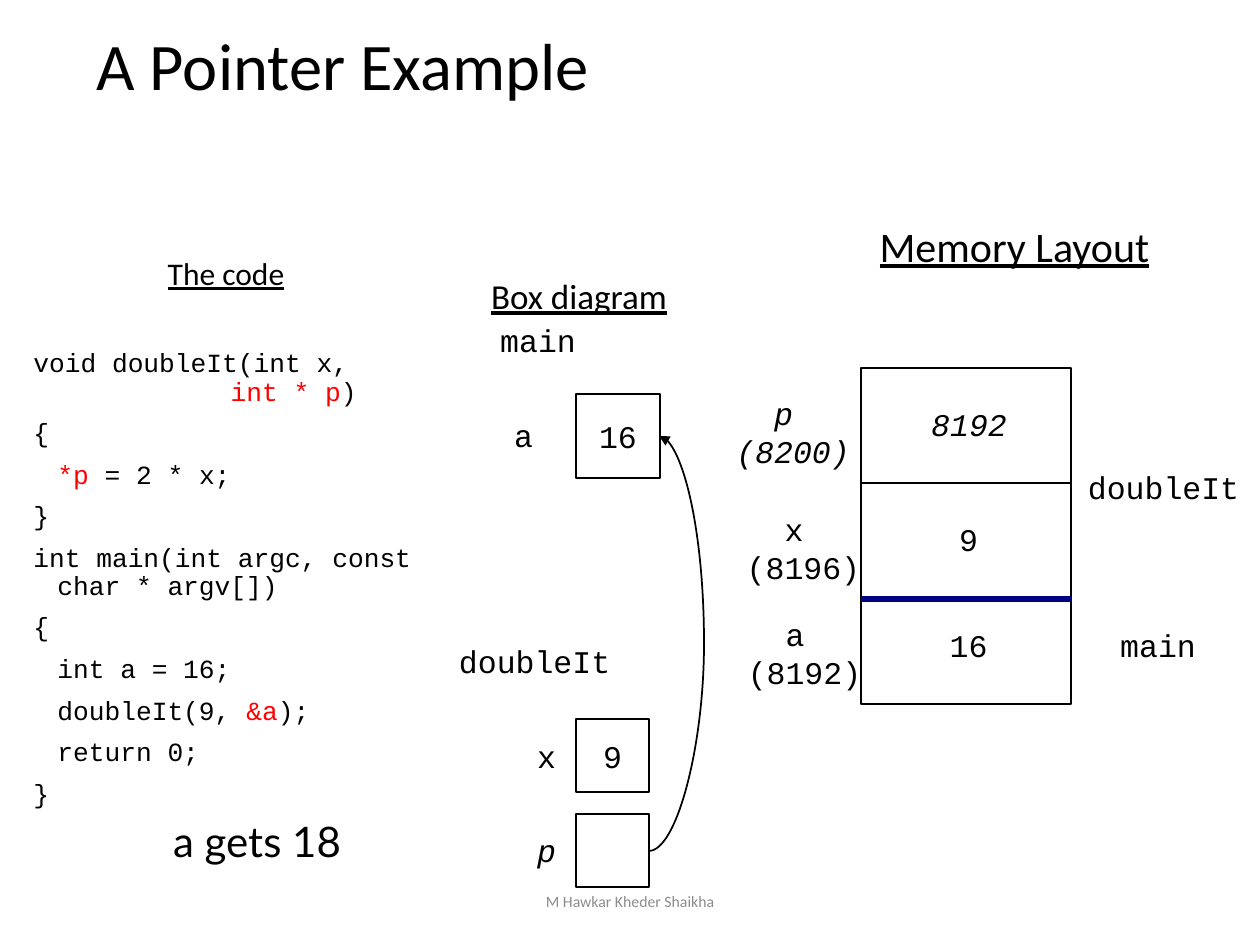
from lxml.etree import SubElement
from pptx import Presentation
from pptx.dml.color import RGBColor
from pptx.enum.shapes import MSO_CONNECTOR, MSO_SHAPE
from pptx.enum.text import MSO_ANCHOR, PP_ALIGN
from pptx.oxml.ns import qn
from pptx.util import Pt

EMU_PER_PX = 914400 / 126
BLACK, WHITE, RED, NAVY, GRAY = "000000", "FFFFFF", "FF0000", "000080", "8C8C8C"
SANS, MONO, NOTE = "Calibri", "Courier New", "Lato"


def px(n):
    return round(n * EMU_PER_PX)


def color(value):
    return RGBColor.from_string(value)


class Deck:
    def __init__(self, width, height):
        self.prs = Presentation()
        self.prs.slide_width, self.prs.slide_height = px(width), px(height)
        self.s = self.prs.slides.add_slide(self.prs.slide_layouts[6])

    def style(self, p, size, font=MONO, fill=BLACK, align=PP_ALIGN.CENTER,
              italic=False, underline=False, spacing=None):
        p.alignment = align
        if spacing:
            p.line_spacing = spacing
        p.font.size, p.font.name = Pt(size), font
        p.font.color.rgb = color(fill)
        p.font.italic, p.font.underline = italic, underline

    def text(self, box, text, size=18, wrap=False, anchor=MSO_ANCHOR.TOP, **style):
        tf = self.s.shapes.add_textbox(*map(px, box)).text_frame
        tf.word_wrap, tf.vertical_anchor = wrap, anchor
        p = tf.paragraphs[0]
        p.text = text
        self.style(p, size, **style)
        return tf

    def code_line(self, tf, parts, before=7.5, left=0, hanging=0):
        p = tf.add_paragraph()
        pPr = p._p.get_or_add_pPr()
        pPr.set("marL", str(px(left)))
        pPr.set("indent", str(px(-hanging)))
        self.style(p, 15, align=PP_ALIGN.LEFT, spacing=0.9)
        p.space_before = Pt(before)
        for i, part in enumerate(parts):
            for j, piece in enumerate(part.split("\v")):
                if j:
                    p.add_line_break()
                r = p.add_run()
                r.text = piece
                if i % 2:
                    r.font.color.rgb = color(RED)

    def box(self, x, y, w, h, text=""):
        sp = self.s.shapes.add_shape(MSO_SHAPE.RECTANGLE, px(x), px(y), px(w), px(h))
        sp.shadow.inherit = False
        sp.fill.solid()
        sp.fill.fore_color.rgb = color(WHITE)
        sp.line.color.rgb = color(BLACK)
        sp.line.width = Pt(1)
        if text:
            tf = sp.text_frame
            tf.word_wrap, tf.vertical_anchor = False, MSO_ANCHOR.MIDDLE
            tf.paragraphs[0].text = text
            self.style(tf.paragraphs[0], 18)

    def line(self, x1, y1, x2, y2, stroke=BLACK, width=1, kind=MSO_CONNECTOR.STRAIGHT):
        c = self.s.shapes.add_connector(kind, px(x1), px(y1), px(x2), px(y2))
        c.line.color.rgb = color(stroke)
        c.line.width = Pt(width)
        SubElement(c._element.spPr, qn("a:effectLst"))
        return c

    def curved_arrow(self, x1, y1, x2, y2, bulge_x):
        c = self.line(x1, y1, x2, y2, kind=MSO_CONNECTOR.CURVE)
        SubElement(c.line._get_or_add_ln(), qn("a:tailEnd"), type="triangle")
        adj = round((bulge_x - x1) / (x2 - x1) * 100000)
        guides = c._element.spPr.find(qn("a:prstGeom")).get_or_add_avLst()
        SubElement(guides, qn("a:gd"), name="adj1", fmla=f"val {adj}")


def main():
    deck = Deck(1260, 945)
    deck.text((84, 21, 1155, 95), "A Pointer Example", 38, wrap=True, font=SANS,
              anchor=MSO_ANCHOR.MIDDLE, align=PP_ALIGN.LEFT, spacing=0.9)

    code = deck.text((21, 252, 410, 651), "The code", wrap=True, font=SANS,
                     underline=True, spacing=0.9)
    hang = {"left": 24, "hanging": 24}
    body = {"left": 24}
    for parts, layout in [
        (["void doubleIt(int x,\v           ", "int * p", ")"], {**hang, "before": 33}),
        (["{"], hang),
        (["", "*p", " = 2 * x;"], body),
        (["}"], hang),
        (["int main(int argc, const char * argv[])"], hang),
        (["{"], hang),
        (["int a = 16;"], body),
        (["doubleIt(9, ", "&a", ");"], body),
        (["return 0;"], body),
        (["}"], hang),
    ]:
        deck.code_line(code, parts, **layout)

    deck.text((394, 273, 370, 77), "Box diagram", 20, wrap=True, font=SANS,
              underline=True, spacing=0.9)
    deck.text((819, 214, 391, 113), "Memory Layout", 24, wrap=True, font=SANS,
              underline=True)

    deck.box(576, 394, 84, 84, "16")
    deck.box(576, 719, 73, 73, "9")
    deck.box(576, 814, 73, 73)
    deck.curved_arrow(649, 851, 659, 436, bulge_x=704)

    deck.box(861, 368, 210, 336)
    deck.line(861, 483, 1071, 483)
    deck.line(861, 599, 1071, 599, NAVY, 3)

    for x, y, w, h, label, italic in [
        (483, 315, 110, 54, "main", False),
        (500, 410, 47, 54, "a", False),
        (438, 636, 193, 54, "doubleIt", False),
        (523, 731, 47, 54, "x", False),
        (523, 825, 47, 54, "p", True),
        (714, 388, 158, 88, "p \v(8200)", True),
        (714, 504, 179, 88, "x \v(8196)", False),
        (735, 609, 139, 88, "a \v(8192)", False),
        (914, 399, 110, 54, "8192", True),
        (945, 514, 47, 54, "9", False),
        (935, 620, 67, 54, "16", False),
        (1067, 462, 193, 54, "doubleIt", False),
        (1103, 620, 110, 54, "main", False),
    ]:
        deck.text((x, y, w, h), label, italic=italic)

    deck.text((158, 809, 198, 63), "a gets 18", 24, font=NOTE)
    deck.text((417, 876, 426, 50), "M Hawkar Kheder Shaikha", 9, wrap=True, font=SANS,
              anchor=MSO_ANCHOR.MIDDLE, fill=GRAY)
    deck.prs.save("out.pptx")


if __name__ == "__main__":
    main()
